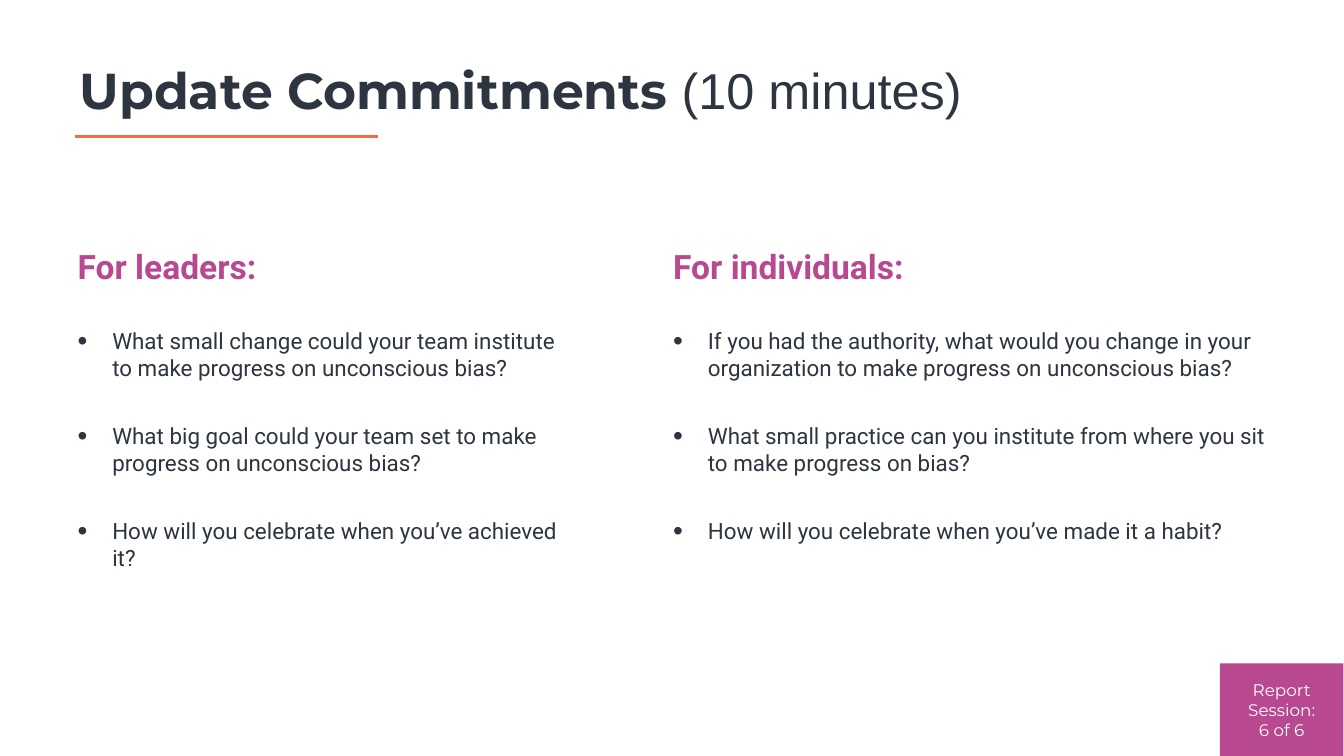
from pptx import Presentation
from pptx.dml.color import RGBColor
from pptx.enum.shapes import MSO_CONNECTOR, MSO_SHAPE
from pptx.enum.text import MSO_ANCHOR, MSO_AUTO_SIZE, PP_ALIGN
from pptx.oxml.ns import qn
from pptx.util import Cm, Pt
from lxml.etree import SubElement

DARK, PINK, ORANGE, WHITE = "2D3540", "B8488F", "F16C41", "FFFFFF"
LEFT = Cm(3.76)


def rgb(value):
    return RGBColor.from_string(value)


def add_text(p, text, size, color=DARK, font="Roboto", bold=False,
             align=PP_ALIGN.LEFT, before=0, bullet=False):
    p.alignment = align
    p.space_before = Pt(before)
    r = p.add_run()
    r.text = text
    r.font.size, r.font.name, r.font.bold = Pt(size), font, bold
    r.font.color.rgb = rgb(color)
    if bullet:
        pPr = p._p.get_or_add_pPr()
        pPr.set("marL", str(Cm(1.75)))
        pPr.set("indent", str(-Cm(1.75)))
        SubElement(pPr, qn("a:buSzPct"), val="125000")
        SubElement(pPr, qn("a:buFont"), typeface="Arial")
        SubElement(pPr, qn("a:buChar"), char="•")


prs = Presentation()
prs.slide_width, prs.slide_height = Cm(67.74), Cm(38.1)
s = prs.slides.add_slide(prs.slide_layouts[5])
s.background.fill.solid()
s.background.fill.fore_color.rgb = rgb(WHITE)

# Title
sp = s.shapes.title
sp.left, sp.top, sp.width, sp.height = LEFT, Cm(2.16), Cm(58.42), Cm(4.7)
tf = sp.text_frame
tf.auto_size = MSO_AUTO_SIZE.NONE
tf.vertical_anchor = MSO_ANCHOR.MIDDLE
p = tf.paragraphs[0]
add_text(p, "Update Commitments ", 72, font="Montserrat", bold=True)
add_text(p, "(10 minutes)", 72, font="Arial")

# Rule under the title
line = s.shapes.add_connector(MSO_CONNECTOR.STRAIGHT, LEFT, Cm(6.88), Cm(19.05), Cm(6.88))
line.line.color.rgb = rgb(ORANGE)
line.line.width = Pt(4.5)
SubElement(line._element.spPr, qn("a:effectLst"))

# Session badge background
badge = s.shapes.add_shape(MSO_SHAPE.RECTANGLE, Cm(61.49), Cm(33.43), Cm(6.22), Cm(4.67))
badge.shadow.inherit = False
badge.fill.solid()
badge.fill.fore_color.rgb = rgb(PINK)
badge.line.fill.background()

# Text boxes: position and size in cm, anchor, paragraphs with their format
heading = dict(size=48, color=PINK, bold=True, before=59)
question = dict(size=32, before=59, bullet=True)
session = dict(size=24, color=WHITE, font="Montserrat", align=PP_ALIGN.CENTER)
boxes = [
    ((3.76, 12.22, 24.99, 19.81), MSO_ANCHOR.TOP, [
        ("For leaders:", heading),
        ("What small change could your team institute to make progress on unconscious bias?", question),
        ("What big goal could your team set to make progress on unconscious bias?", question),
        ("How will you celebrate when you’ve achieved it?", question)]),
    ((33.78, 12.22, 30.2, 16.46), MSO_ANCHOR.TOP, [
        ("For individuals:", heading),
        ("If you had the authority, what would you change in your organization "
         "to make progress on unconscious bias?", question),
        ("What small practice can you institute from where you sit to make progress on bias?", question),
        ("How will you celebrate when you’ve made it a habit?", question)]),
    ((61.49, 34.09, 6.22, 3.35), MSO_ANCHOR.MIDDLE, [
        ("Report Session:", session),
        ("6 of 6", session)]),
]
for place, anchor, paragraphs in boxes:
    tf = s.shapes.add_textbox(*map(Cm, place)).text_frame
    tf.word_wrap = True
    tf.vertical_anchor = anchor
    tf.margin_left = tf.margin_right = tf.margin_top = tf.margin_bottom = Cm(0.15)
    for i, (text, style) in enumerate(paragraphs):
        p = tf.add_paragraph() if i else tf.paragraphs[0]
        add_text(p, text, **style)

prs.save("out.pptx")
